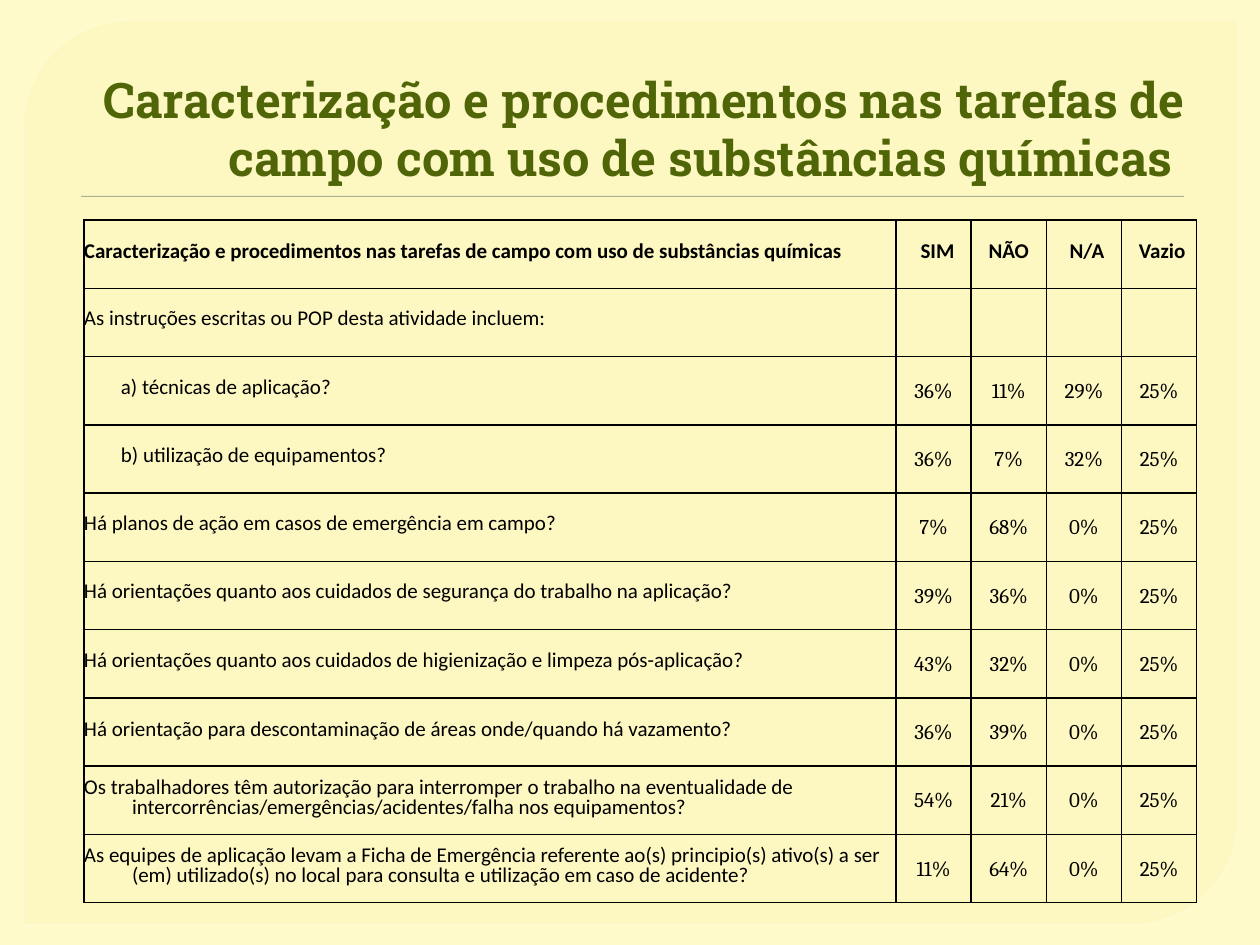
from dataclasses import dataclass

from lxml import etree
from pptx import Presentation
from pptx.dml.color import RGBColor
from pptx.enum.shapes import MSO_SHAPE
from pptx.enum.text import MSO_ANCHOR, PP_ALIGN
from pptx.oxml.ns import qn
from pptx.util import Pt

LEFT, CENTER, RIGHT = PP_ALIGN.LEFT, PP_ALIGN.CENTER, PP_ALIGN.RIGHT
MIDDLE, BOTTOM = MSO_ANCHOR.MIDDLE, MSO_ANCHOR.BOTTOM
PANEL, RULE = MSO_SHAPE.ROUND_2_DIAG_RECTANGLE, MSO_SHAPE.RECTANGLE
EMU_PER_INCH, PX_PER_INCH = 914400, 126
HEADING = "Caracterização e procedimentos nas tarefas de campo com uso de substâncias químicas"
TABLE_WIDTH, TABLE_HEIGHT, QUESTION_WIDTH = 1113, 683, 812
ANSWER_SPACING = 1.07


@dataclass(frozen=True)
class Style:
    font: str = "Calibri"
    size: int = 12
    color: str = "000000"
    bold: bool = False


@dataclass(frozen=True)
class Layout:
    align: PP_ALIGN = LEFT
    margin: int = 48
    hanging: int = 48
    spacing: float = Pt(10.5)


@dataclass(frozen=True)
class Question:
    text: str
    answers: tuple[str, ...] = ()
    layout: Layout = Layout()


TITLE_STYLE = Style("Roboto Slab", 28, "506508", True)
HEADER_STYLE = Style(bold=True)
QUESTION_STYLE = Style()
ANSWER_STYLE = Style("Cambria")
ANSWER_LAYOUT = Layout(CENTER, 32, 32, ANSWER_SPACING)
ITEM_LAYOUT = Layout(margin=69, hanging=32)
LOOSE_LAYOUT = Layout(spacing=Pt(11.5))
HEADER_LAYOUT = Layout(LEFT, 32, 32, Pt(11.2))
COLUMN_HEADS = (("SIM", 40), ("NÃO", 32), ("N/A", 38), ("Vazio", 38))
QUESTIONS = (
    Question("As instruções escritas ou POP desta atividade incluem:"),
    Question("a) técnicas de aplicação?", ("36%", "11%", "29%", "25%"), ITEM_LAYOUT),
    Question("b) utilização de equipamentos?", ("36%", "7%", "32%", "25%"), ITEM_LAYOUT),
    Question("Há planos de ação em casos de emergência em campo?",
             ("7%", "68%", "0%", "25%")),
    Question("Há orientações quanto aos cuidados de segurança do trabalho na aplicação?",
             ("39%", "36%", "0%", "25%")),
    Question("Há orientações quanto aos cuidados de higienização e limpeza pós-aplicação?",
             ("43%", "32%", "0%", "25%")),
    Question("Há orientação para descontaminação de áreas onde/quando há vazamento?",
             ("36%", "39%", "0%", "25%"), LOOSE_LAYOUT),
    Question("Os trabalhadores têm autorização para interromper o trabalho na eventualidade de "
             "intercorrências/emergências/acidentes/falha nos equipamentos?",
             ("54%", "21%", "0%", "25%"), LOOSE_LAYOUT),
    Question("As equipes de aplicação levam a Ficha de Emergência referente ao(s) principio(s) "
             "ativo(s) a ser (em) utilizado(s) no local para consulta e utilização em caso de "
             "acidente?", ("11%", "64%", "0%", "25%"), LOOSE_LAYOUT),
)


def emu(px: int) -> int:
    return round(px * EMU_PER_INCH / PX_PER_INCH)


def rgb(color: str) -> RGBColor:
    return RGBColor.from_string(color)


def apply(target, values: dict) -> None:
    for name, value in values.items():
        setattr(target, name, value)


def write(para, text: str, style: Style) -> None:
    span = para.add_run()
    span.text = text
    apply(span.font, {"name": style.font, "size": Pt(style.size), "bold": style.bold})
    span.font.color.rgb = rgb(style.color)


def set_alpha(fill, percent: int) -> None:
    color = fill._xPr.find(qn("a:solidFill"))[0]
    etree.SubElement(color, qn("a:alpha"), val=str(percent * 1000))


def add_block(page, kind: MSO_SHAPE, box: tuple[int, ...], color: str):
    shape = page.shapes.add_shape(kind, *map(emu, box))
    shape.shadow.inherit = False
    shape.fill.solid()
    shape.fill.fore_color.rgb = rgb(color)
    shape.line.fill.background()
    return shape


def add_panel(page) -> None:
    panel = add_block(page, PANEL, (23, 20, 1215, 905), "FDF8BE")
    panel.adjustments[0] = 0.118
    panel.adjustments[1] = 0
    set_alpha(panel.fill, 65)
    panel.line.width = Pt(0.87)
    panel.line.fill.solid()
    panel.line.fill.fore_color.rgb = rgb("FFFCD6")
    set_alpha(panel.line.fill, 88)


def add_title(page) -> None:
    frame = page.shapes.add_textbox(*map(emu, (63, 35, 1134, 158))).text_frame
    apply(frame, {"word_wrap": True, "vertical_anchor": BOTTOM})
    para = frame.paragraphs[0]
    para.alignment = RIGHT
    para._p.get_or_add_pPr().set("marL", str(emu(8)))
    write(para, HEADING + " ", TITLE_STYLE)


def add_borders(cell) -> None:
    properties = cell._tc.get_or_add_tcPr()
    for index, side in enumerate(("a:lnL", "a:lnR", "a:lnT", "a:lnB")):
        line = etree.Element(qn(side), w=str(Pt(1)))
        fill = etree.SubElement(line, qn("a:solidFill"))
        etree.SubElement(fill, qn("a:srgbClr"), val="000000")
        properties.insert(index, line)


def fill_cell(cell, text: str, style: Style, layout: Layout) -> None:
    apply(cell, {"margin_left": 0, "margin_right": 0, "margin_top": 0,
                 "margin_bottom": 0, "vertical_anchor": MIDDLE})
    cell.fill.background()
    add_borders(cell)
    para = cell.text_frame.paragraphs[0]
    apply(para, {"alignment": layout.align, "line_spacing": layout.spacing})
    indents = para._p.get_or_add_pPr()
    indents.set("marL", str(emu(layout.margin)))
    indents.set("indent", str(-emu(layout.hanging)))
    if text:
        write(para, text, style)


def add_answer_table(page) -> None:
    box = (84, 220, TABLE_WIDTH, TABLE_HEIGHT)
    table = page.shapes.add_table(
        len(QUESTIONS) + 1, len(COLUMN_HEADS) + 1, *map(emu, box)).table
    apply(table, {"first_row": False, "horz_banding": False})
    answer_width = emu(TABLE_WIDTH - QUESTION_WIDTH) // len(COLUMN_HEADS)
    for index, column in enumerate(table.columns):
        column.width = answer_width if index else emu(QUESTION_WIDTH)
    fill_cell(table.cell(0, 0), HEADING, HEADER_STYLE, HEADER_LAYOUT)
    for column, (head, margin) in enumerate(COLUMN_HEADS, 1):
        layout = Layout(CENTER, margin, 32, Pt(11.3))
        fill_cell(table.cell(0, column), head, HEADER_STYLE, layout)
    for row, question in enumerate(QUESTIONS, 1):
        fill_cell(table.cell(row, 0), question.text, QUESTION_STYLE, question.layout)
        answers = question.answers or ("",) * len(COLUMN_HEADS)
        for column, answer in enumerate(answers, 1):
            fill_cell(table.cell(row, column), answer, ANSWER_STYLE, ANSWER_LAYOUT)


def main() -> None:
    """Build the slide on field procedures with chemical substances."""
    deck = Presentation()
    apply(deck, {"slide_width": emu(1260), "slide_height": emu(945)})
    page = deck.slides.add_slide(deck.slide_layouts[6])
    page.background.fill.solid()
    page.background.fill.fore_color.rgb = rgb("FEFAC9")
    add_panel(page)
    add_block(page, RULE, (81, 196, 1103, 1), "A5B592")
    add_title(page)
    add_answer_table(page)
    deck.save("out.pptx")


if __name__ == "__main__":
    main()
